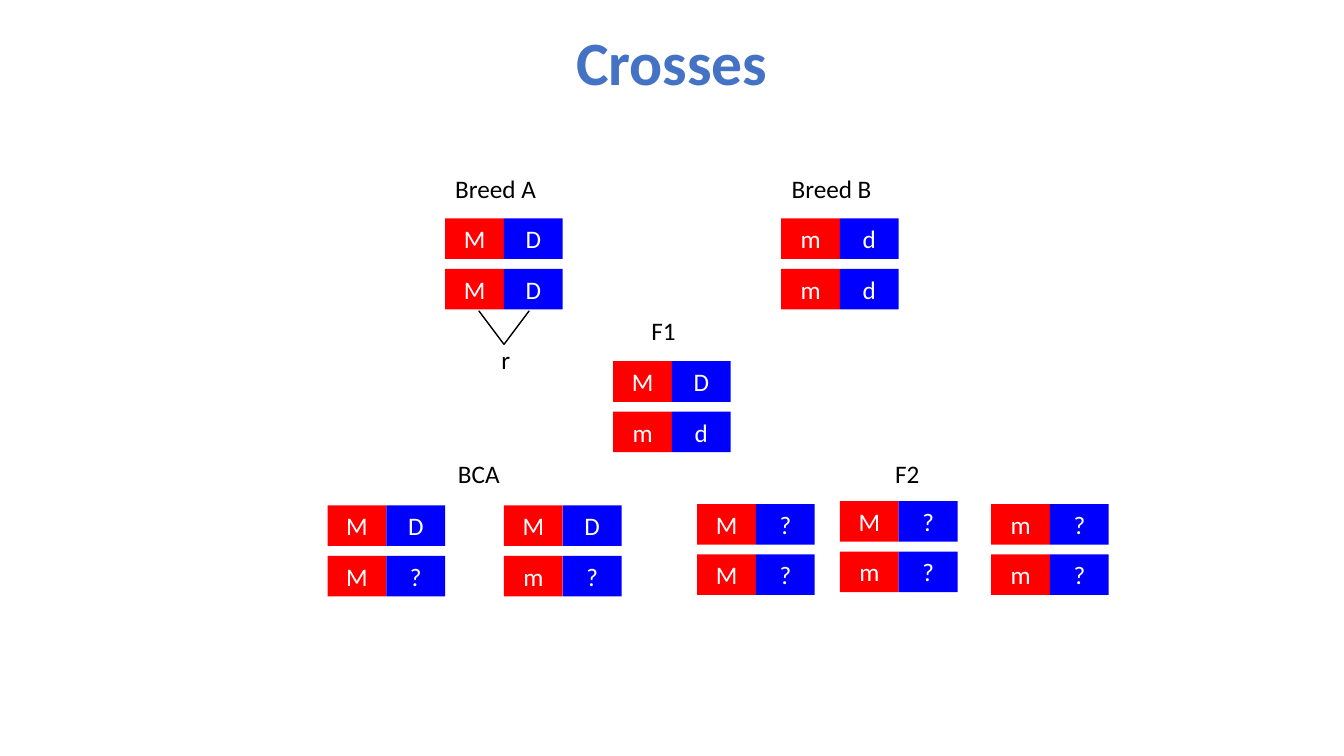
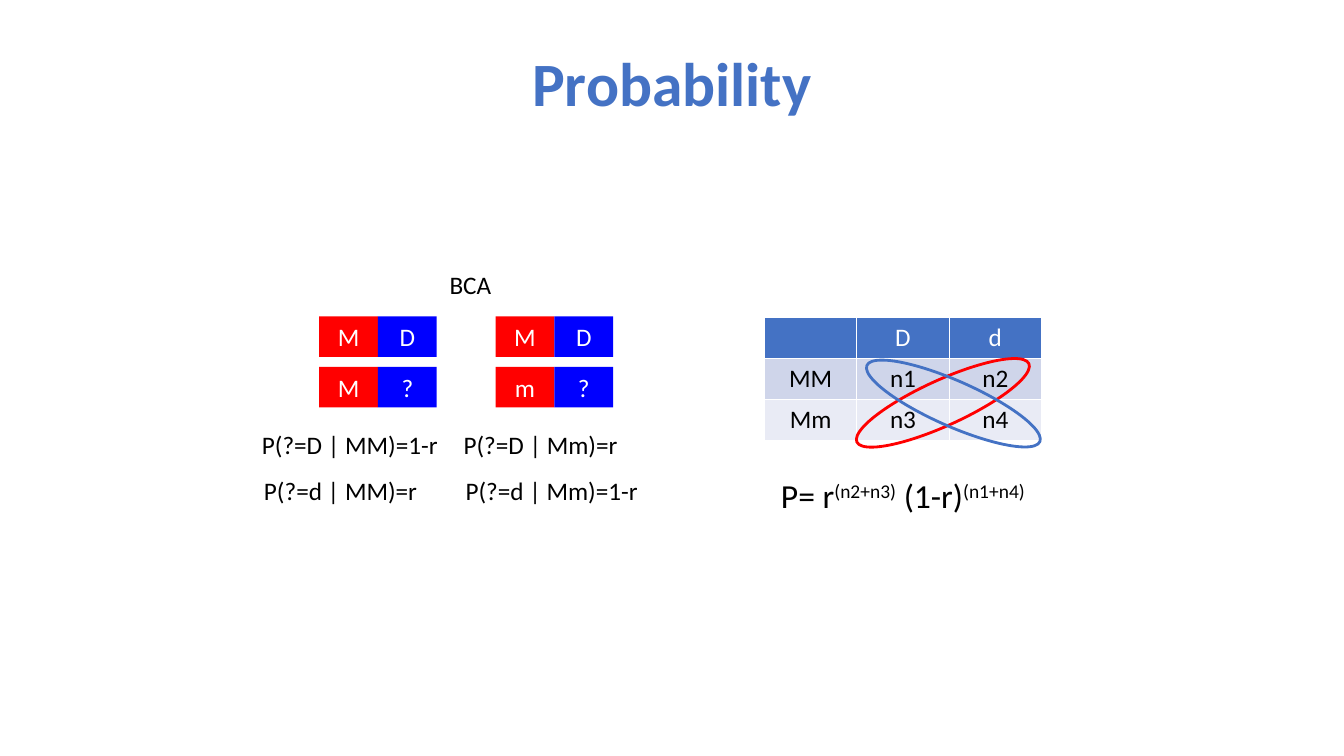
"""Build two slides on marker crosses and the probability of recombination."""
import pptx
import pptx.dml.color
import pptx.enum.shapes
import pptx.enum.text
import pptx.oxml.ns
import pptx.util
from lxml import etree

Pt = pptx.util.Pt
ALIGN = pptx.enum.text.PP_ALIGN
MIDDLE = pptx.enum.text.MSO_ANCHOR.MIDDLE
SHAPE = pptx.enum.shapes.MSO_SHAPE

FONT = "Calibri"
BLACK, WHITE, ACCENT = "000000", "FFFFFF", "4472C4"
MARKER, GENE = "FF0000", "0000FF"
ROW_FILLS = [ACCENT, "CFD5EA", "E9EBF5"]
LOCUS_WIDTH, LOCUS_HEIGHT, STRAND_STEP = 42, 29, 36
LABEL_WIDTH = 84

BREEDS = [
    ("Breed A", (312, 120), [((318, 156), "MD", "MD")]),
    ("Breed B", (552, 120), [((558, 156), "md", "md")]),
]
F1 = ("F1", (432, 222), [((438, 258), "MD", "md")])
BCA = ("BCA", (300, 324), [
    ((234, 361), "MD", "M?"),
    ((360, 361), "MD", "m?"),
])
F2 = ("F2", (606, 324), [
    ((498, 360), "M?", "M?"),
    ((600, 358), "M?", "m?"),
    ((708, 360), "m?", "m?"),
])
BCA_SHIFT = (-6, -135)
FORK_TIP, FORK_TOP, FORK_REACH = (360, 246), 222, 18

FORMULAS = [
    ("P(?=D | MM)=1-r", (180, 303, 142)),
    ("P(?=d | MM)=r", (181.5, 336, 130)),
    ("P(?=D | Mm)=r", (324, 303, 126)),
    ("P(?=d | Mm)=1-r", (325.5, 336, 139)),
]
COUNTS = [["", "D", "d"], ["MM", "n1", "n2"], ["Mm", "n3", "n4"]]
LIKELIHOOD = [("P= r", False), ("(n2+n3)", True), (" (1-r)", False), ("(n1+n4)", True)]
ELLIPSES = [((606, 271.5), 335.5, MARKER), ((613.5, 272), 23.8, ACCENT)]


def rgb(color):
    return pptx.dml.color.RGBColor.from_string(color)


def write(frame, text, size=18, color=BLACK, bold=False, align=ALIGN.CENTER, wrap=True):
    """Fill a frame with a string, or with (string, is superscript) pairs."""
    frame.word_wrap = wrap
    para = frame.paragraphs[0]
    para.alignment = align
    for part, superscript in [(text, False)] if isinstance(text, str) else text:
        span = para.add_run()
        span.text = part
        span.font.name, span.font.size, span.font.bold = FONT, Pt(size), bold
        span.font.color.rgb = rgb(color)
        if superscript:
            span.font._element.set("baseline", "30000")


def add_text(shapes, text, left, top, width, height=LOCUS_HEIGHT, **style):
    box = shapes.add_textbox(Pt(left), Pt(top), Pt(width), Pt(height))
    write(box.text_frame, text, **style)


def add_page(deck, title, left, top, width, height):
    page = deck.slides.add_slide(deck.slide_layouts.get_by_name("Title Only"))
    box = page.shapes.title
    box.left, box.top, box.width, box.height = map(Pt, (left, top, width, height))
    write(box.text_frame, title, size=44, color=ACCENT, bold=True)
    box.text_frame.vertical_anchor = MIDDLE
    box.text_frame.paragraphs[0].line_spacing = 0.9
    return page


def add_locus(shapes, allele, left, top, fill):
    box = shapes.add_shape(SHAPE.RECTANGLE, Pt(left), Pt(top), Pt(LOCUS_WIDTH), Pt(LOCUS_HEIGHT))
    box.shadow.inherit = False
    box.fill.solid()
    box.fill.fore_color.rgb = rgb(fill)
    box.line.fill.background()
    write(box.text_frame, allele, color=WHITE)
    box.text_frame.vertical_anchor = MIDDLE


def add_cross(shapes, cross, shift=(0, 0)):
    label, (label_left, label_top), genotypes = cross
    add_text(shapes, label, label_left + shift[0], label_top + shift[1], LABEL_WIDTH)
    for (left, top), *strands in genotypes:
        for row, strand in enumerate(strands):
            for column, (allele, fill) in enumerate(zip(strand, (MARKER, GENE))):
                add_locus(shapes, allele, left + shift[0] + column * LOCUS_WIDTH,
                          top + shift[1] + row * STRAND_STEP, fill)


def add_fork(shapes):
    tip_left, tip_top = FORK_TIP
    for reach in (-FORK_REACH, FORK_REACH):
        line = shapes.add_connector(pptx.enum.shapes.MSO_CONNECTOR.STRAIGHT,
                                    Pt(tip_left + reach), Pt(FORK_TOP), Pt(tip_left), Pt(tip_top))
        line.line.color.rgb = rgb(BLACK)
        line.line.width = Pt(1)
        etree.SubElement(line._element.spPr, pptx.oxml.ns.qn("a:effectLst"))
    add_text(shapes, "r", 351, 242.5, 21, align=ALIGN.LEFT, wrap=False)


def add_counts(shapes):
    table = shapes.add_table(3, 3, Pt(546), Pt(227), Pt(198), Pt(87)).table
    for row, (texts, fill) in enumerate(zip(COUNTS, ROW_FILLS)):
        for column, text in enumerate(texts):
            cell = table.cell(row, column)
            cell.fill.solid()
            cell.fill.fore_color.rgb = rgb(fill)
            cell.vertical_anchor = MIDDLE
            write(cell.text_frame, text, color=BLACK if row else WHITE)


def add_ellipse(shapes, place, rotation, color):
    left, top = place
    ring = shapes.add_shape(SHAPE.OVAL, Pt(left), Pt(top), Pt(135), Pt(32.5))
    ring.shadow.inherit = False
    ring.rotation = rotation
    ring.fill.background()
    ring.line.color.rgb = rgb(color)
    ring.line.width = Pt(2)


def main():
    deck = pptx.Presentation()
    deck.slide_width, deck.slide_height = Pt(960), Pt(540)

    page = add_page(deck, "Crosses", 144, 2, 672, 90)
    for breed in BREEDS:
        add_cross(page.shapes, breed)
    for cross in (F1, BCA, F2):
        add_cross(page.shapes.add_group_shape().shapes, cross)
    add_fork(page.shapes)

    page = add_page(deck, "Probability", 156, 0, 648, 124)
    add_counts(page.shapes)
    backcross = page.shapes.add_group_shape().shapes
    add_cross(backcross, BCA, BCA_SHIFT)
    for text, (left, top, width) in FORMULAS:
        add_text(backcross, text, left, top, width, align=ALIGN.LEFT, wrap=False)
    add_text(page.shapes, LIKELIHOOD, 519, 336, 252, 36, size=24)
    for ellipse in ELLIPSES:
        add_ellipse(page.shapes, *ellipse)

    deck.save("out.pptx")


if __name__ == "__main__":
    main()
